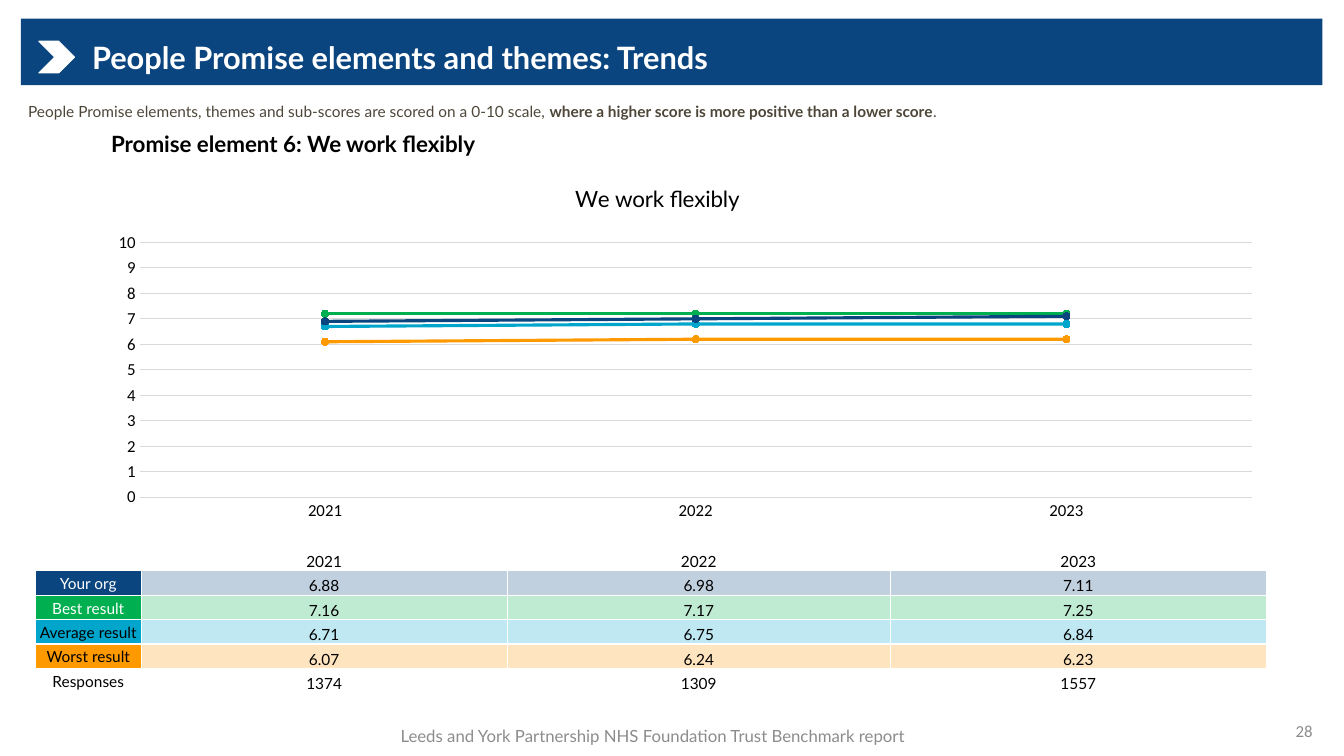
from dataclasses import dataclass

import lxml.etree
import pptx
import pptx.chart.data
import pptx.dml.color
import pptx.enum.chart
import pptx.enum.shapes
import pptx.enum.text
import pptx.oxml
import pptx.oxml.ns
import pptx.util

Cm = pptx.util.Cm
Pt = pptx.util.Pt
qn = pptx.oxml.ns.qn
Align = pptx.enum.text.PP_ALIGN
Anchor = pptx.enum.text.MSO_ANCHOR


@dataclass(frozen=True)
class Theme:
    navy: str = "0B457F"
    green: str = "00B050"
    cyan: str = "00A5CC"
    orange: str = "FF9900"
    white: str = "FFFFFF"
    black: str = "000000"
    brown: str = "4D4639"
    footer: str = "8C8C8C"
    grid: str = "D9D9D9"
    font: str = "Lato"
    number_font: str = "Calibri"
    title_size: int = 22
    heading_size: int = 16
    small_size: int = 12
    body_size: int = 11
    chart_size: int = 10


THEME = Theme()
YEARS = ["2021", "2022", "2023"]
RESULTS = [
    ("Your org", THEME.navy, THEME.white, (6.88, 6.98, 7.11)),
    ("Best result", THEME.green, THEME.white, (7.16, 7.17, 7.25)),
    ("Average result", THEME.cyan, THEME.black, (6.71, 6.75, 6.84)),
    ("Worst result", THEME.orange, THEME.black, (6.07, 6.24, 6.23)),
]
RESPONSES = (1374, 1309, 1557)
SERIES_ORDER = (2, 1, 3, 0)
CHART_WIDTH, CHART_HEIGHT = 29.74, 8.94


def rgb(color):
    return pptx.dml.color.RGBColor.from_string(color)


def style_font(font, size, color=THEME.black, name=THEME.font, bold=False):
    font.size = Pt(size)
    font.name = name
    font.bold = bold
    font.color.rgb = rgb(color)


def style_line(line, color, width):
    line.color.rgb = rgb(color)
    line.width = Pt(width)


def write(paragraph, text, align=Align.LEFT, **font_format):
    paragraph.alignment = align
    run = paragraph.add_run()
    run.text = text
    style_font(run.font, **font_format)


def add_text(slide, box, *parts, anchor=Anchor.TOP, **text_format):
    frame = slide.shapes.add_textbox(*map(Cm, box)).text_frame
    frame.word_wrap = True
    frame.vertical_anchor = anchor
    for text, bold in parts:
        write(frame.paragraphs[0], text, bold=bold, **text_format)


def add_block(slide, kind, box, color, outlined=False):
    shape = slide.shapes.add_shape(kind, *map(Cm, box))
    shape.shadow.inherit = False
    shape.fill.solid()
    shape.fill.fore_color.rgb = rgb(color)
    if outlined:
        style_line(shape.line, color, 0.75)
    else:
        shape.line.fill.background()


def format_cell(cell, color, opacity=100):
    cell.margin_left = cell.margin_right = cell.margin_top = Cm(0.03)
    cell.margin_bottom = 0
    properties = cell._tc.get_or_add_tcPr()
    for side in ("lnL", "lnR", "lnT", "lnB"):
        border = lxml.etree.SubElement(properties, qn(f"a:{side}"), w=str(Pt(1)))
        fill = lxml.etree.SubElement(border, qn("a:solidFill"))
        lxml.etree.SubElement(fill, qn("a:srgbClr"), val=THEME.white)
    cell.fill.solid()
    cell.fill.fore_color.rgb = rgb(color)
    if opacity < 100:
        tint = properties.find(qn("a:solidFill")).find(qn("a:srgbClr"))
        lxml.etree.SubElement(tint, qn("a:alpha"), val=str(opacity * 1000))


def add_results_table(slide):
    rows = [("", THEME.white, THEME.black, YEARS), *RESULTS,
            ("Responses", THEME.white, THEME.black, RESPONSES)]
    widths = (2.67, 9.22, 9.66, 9.47)
    table_height = 3.69
    table = slide.shapes.add_table(
        len(rows), len(widths), Cm(0.89), Cm(13.77),
        Cm(sum(widths)), Cm(table_height)).table
    table.first_row = table.horz_banding = False
    for column, width in zip(table.columns, widths):
        column.width = Cm(width)
    for row, (label, color, label_color, values) in zip(table.rows, rows):
        row.height = Cm(table_height / len(rows))
        for index, (cell, value) in enumerate(zip(row.cells, (label, *values))):
            is_label = index == 0
            format_cell(cell, color, 100 if is_label or color == THEME.white else 25)
            cell.vertical_anchor = Anchor.MIDDLE if is_label else Anchor.BOTTOM
            paragraph = cell.text_frame.paragraphs[0]
            if value == "":
                paragraph._p.get_or_add_endParaRPr().set("sz", str(THEME.body_size * 100))
                continue
            write(paragraph, str(value), align=Align.CENTER, size=THEME.body_size,
                  color=label_color if is_label else THEME.black)


def set_layout(element, left, top, width=None, height=None):
    layout = element.find(qn("c:layout"))
    if layout is None:
        layout = pptx.oxml.parse_xml(f'<c:layout {pptx.oxml.ns.nsdecls("c")}/>')
        element.insert(0 if element.find(qn("c:tx")) is None else 1, layout)
    manual = lxml.etree.SubElement(layout, qn("c:manualLayout"))
    if width:
        lxml.etree.SubElement(manual, qn("c:layoutTarget"), val="inner")
    for mode in ("xMode", "yMode"):
        lxml.etree.SubElement(manual, qn(f"c:{mode}"), val="edge")
    for name, length, whole in (("x", left, CHART_WIDTH), ("y", top, CHART_HEIGHT),
                                ("w", width, CHART_WIDTH), ("h", height, CHART_HEIGHT)):
        if length is not None:
            lxml.etree.SubElement(manual, qn(f"c:{name}"), val=str(length / whole))


def style_axis(axis):
    axis.major_tick_mark = axis.minor_tick_mark = pptx.enum.chart.XL_TICK_MARK.NONE
    style_font(axis.tick_labels.font, THEME.small_size, name=THEME.number_font)


def add_trend_chart(slide):
    data = pptx.chart.data.CategoryChartData()
    data.categories = YEARS
    ordered = [RESULTS[index] for index in SERIES_ORDER]
    for label, _, _, values in ordered:
        data.add_series(label, [round(value, 1) for value in values])
    chart = slide.shapes.add_chart(
        pptx.enum.chart.XL_CHART_TYPE.LINE_MARKERS,
        Cm(2.41), Cm(4.37), Cm(CHART_WIDTH), Cm(CHART_HEIGHT), data).chart
    style_font(chart.font, THEME.chart_size, name=THEME.number_font)
    chart.has_legend = False
    chart.has_title = True
    write(chart.chart_title.text_frame.paragraphs[0], "We work flexibly",
          align=Align.CENTER, size=THEME.heading_size)
    set_layout(chart.chart_title._element, 11.98, 0.14)
    set_layout(chart._chartSpace.chart.plotArea, 1.11, 1.74, 28.03, 6.42)

    plot = chart.plots[0]
    plot.vary_by_categories = False
    for series, (_, color, _, _) in zip(plot.series, ordered):
        series.smooth = False
        style_line(series.format.line, color, 2.25)
        marker = series.marker
        marker.style = pptx.enum.chart.XL_MARKER_STYLE.CIRCLE
        marker.size = 5
        marker.format.fill.solid()
        marker.format.fill.fore_color.rgb = rgb(color)
        style_line(marker.format.line, color, 0.75)

    style_axis(chart.category_axis)
    style_line(chart.category_axis.format.line, THEME.grid, 0.75)
    scores = chart.value_axis
    style_axis(scores)
    scores.minimum_scale, scores.maximum_scale, scores.major_unit = 0, 10, 1
    scores.tick_labels.number_format = "0"
    scores.tick_labels.number_format_is_linked = False
    scores.format.line.fill.background()
    style_line(scores.major_gridlines.format.line, THEME.grid, 0.75)


def main():
    presentation = pptx.Presentation()
    presentation.slide_width = Cm(33.87)
    presentation.slide_height = Cm(19.05)
    slide = presentation.slides.add_slide(presentation.slide_layouts[6])
    shapes = pptx.enum.shapes.MSO_SHAPE

    add_block(slide, shapes.RECTANGLE, (0.53, 0.47, 32.8, 1.68), THEME.navy)
    add_block(slide, shapes.CHEVRON, (0.98, 1.04, 0.9, 0.8), THEME.white, outlined=True)
    add_text(slide, (2.07, 0.87, 24.4, 1.12),
             ("People Promise elements and themes: Trends", True),
             anchor=Anchor.MIDDLE, size=THEME.title_size, color=THEME.white)
    add_text(slide, (0.46, 2.44, 33.07, 0.74),
             ("People Promise elements, themes and sub-scores are scored on a 0-10 scale, ", False),
             ("where a higher score is more positive than a lower score", True),
             (".", False), size=THEME.body_size, color=THEME.brown)
    add_results_table(slide)
    add_trend_chart(slide)
    add_text(slide, (2.55, 3.15, 16.94, 0.94),
             ("Promise element 6: We work flexibly", True), size=THEME.heading_size)
    add_text(slide, (25.71, 17.91, 7.62, 1.02), ("28", False), anchor=Anchor.MIDDLE,
             align=Align.RIGHT, size=THEME.small_size, color=THEME.footer,
             name=THEME.number_font)
    add_text(slide, (7.5, 18.05, 17.91, 0.99),
             ("Leeds and York Partnership NHS Foundation Trust Benchmark report", False),
             anchor=Anchor.MIDDLE, align=Align.CENTER, size=THEME.small_size,
             color=THEME.footer)
    presentation.save("out.pptx")


if __name__ == "__main__":
    main()
